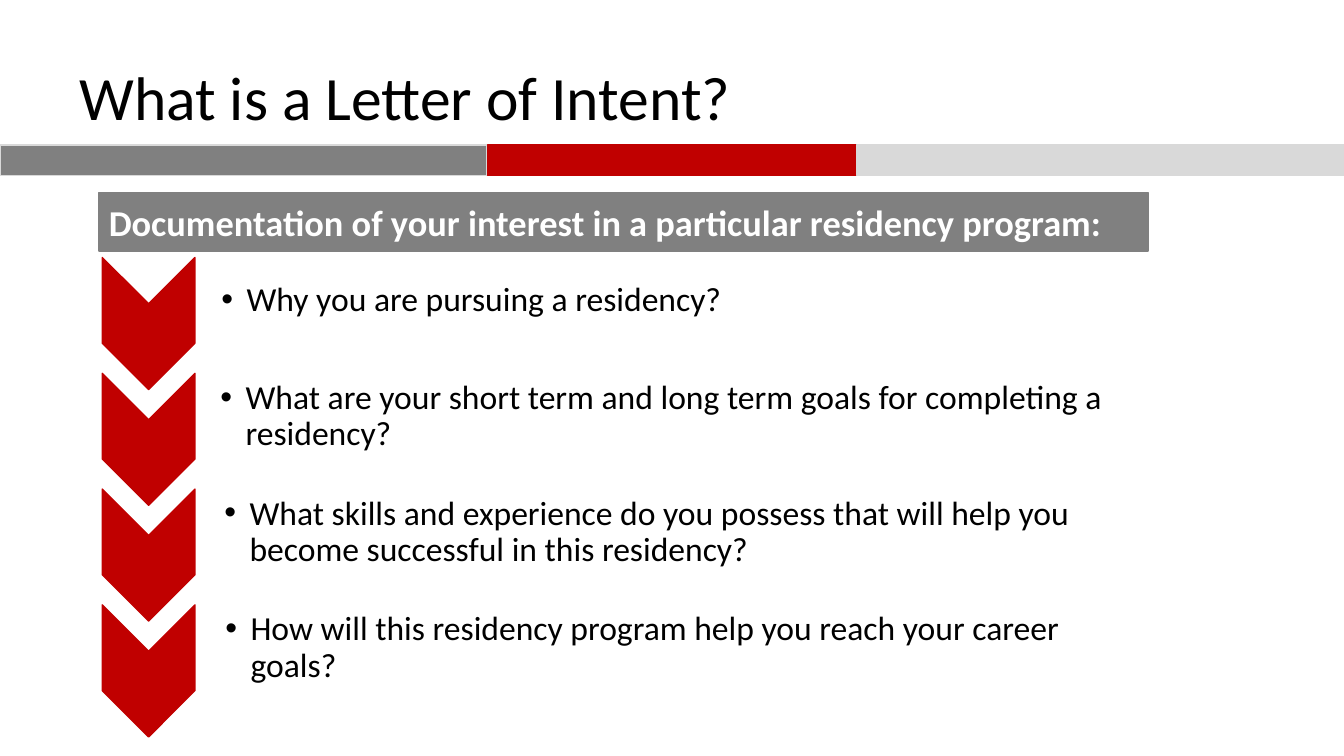
from dataclasses import dataclass

from lxml import etree
from pptx import Presentation
from pptx.dml.color import RGBColor
from pptx.enum.shapes import MSO_SHAPE
from pptx.enum.text import MSO_ANCHOR, PP_ALIGN
from pptx.oxml.ns import qn
from pptx.util import Pt

RECTANGLE = MSO_SHAPE.RECTANGLE
CHEVRON = MSO_SHAPE.CHEVRON
MIDDLE = MSO_ANCHOR.MIDDLE
LEFT = PP_ALIGN.LEFT

# Content
TITLE = "What is a Letter of Intent?"
HEADING = "Documentation of your interest in a particular residency program:"
# Each question with the left edge of its text box
QUESTIONS = [
    ("Why you are pursuing a residency?", 144.7),
    ("What are your short term and long term goals for completing a residency?", 144),
    ("What skills and experience do you possess that will help you become "
     "successful in this residency?", 146.9),
    ("How will this residency program help you reach your career goals?", 147.6),
]


@dataclass(frozen=True)
class Theme:
    font: str = "Calibri"
    black: str = "000000"
    white: str = "FFFFFF"
    gray: str = "808080"
    red: str = "C00000"
    light: str = "D9D9D9"
    title_size: int = 44
    heading_size: int = 26
    question_size: int = 24


THEME = Theme()

# Layout in points
SLIDE_WIDTH, SLIDE_HEIGHT = 960, 540
BAND_TOP, BAND_WIDTH, BAND_HEIGHT = 103.7, 348, 21.6
BANDS = [
    (0, THEME.gray, THEME.light),
    (BAND_WIDTH, THEME.red, THEME.red),
    (SLIDE_WIDTH - BAND_WIDTH, THEME.light, THEME.light),
]
ROW_STEP = 82.7
CHEVRON_BOX = (59, 198, 94.3, 66.2)
QUESTION_TOP, QUESTION_RIGHT, QUESTION_HEIGHT = 187.2, 812.6, 55.4
QUESTION_INSETS = (13.4, 1.4, 1.4, 1.4)
BULLET_INDENT = 18


def add_block(slide, kind, box, fill, line):
    shape = slide.shapes.add_shape(kind, *map(Pt, box))
    shape.shadow.inherit = False
    shape.fill.solid()
    shape.fill.fore_color.rgb = RGBColor.from_string(fill)
    shape.line.color.rgb = RGBColor.from_string(line)
    shape.line.width = Pt(1)
    return shape


def write_text(shape, text, size, color, bold=False, spacing=1.0):
    frame = shape.text_frame
    frame.word_wrap = True
    frame.vertical_anchor = MIDDLE
    frame.text = text
    paragraph = frame.paragraphs[0]
    paragraph.alignment = LEFT
    paragraph.line_spacing = spacing
    font = paragraph.runs[0].font
    font.name, font.size, font.bold = THEME.font, Pt(size), bold
    font.color.rgb = RGBColor.from_string(color)
    return paragraph


def add_bullet(paragraph):
    properties = paragraph._p.get_or_add_pPr()
    properties.set("marL", str(Pt(BULLET_INDENT)))
    properties.set("indent", str(-Pt(BULLET_INDENT)))
    etree.SubElement(properties, qn("a:buFont")).set("typeface", "Arial")
    etree.SubElement(properties, qn("a:buChar")).set("char", "•")


def add_question(slide, row, text, left):
    offset = row * ROW_STEP
    chevron_left, chevron_top, width, height = CHEVRON_BOX
    box = (chevron_left, chevron_top + offset, width, height)
    add_block(slide, CHEVRON, box, THEME.red, THEME.red).rotation = 90

    box = (left, QUESTION_TOP + offset, QUESTION_RIGHT - left, QUESTION_HEIGHT)
    question = slide.shapes.add_textbox(*map(Pt, box))
    frame = question.text_frame
    (frame.margin_left, frame.margin_top,
     frame.margin_right, frame.margin_bottom) = map(Pt, QUESTION_INSETS)
    add_bullet(write_text(question, text, THEME.question_size, THEME.black, spacing=0.9))


def main():
    presentation = Presentation()
    presentation.slide_width = Pt(SLIDE_WIDTH)
    presentation.slide_height = Pt(SLIDE_HEIGHT)
    slide = presentation.slides.add_slide(presentation.slide_layouts[6])

    # Colour bands under the title
    for left, fill, line in BANDS:
        add_block(slide, RECTANGLE, (left, BAND_TOP, BAND_WIDTH, BAND_HEIGHT), fill, line)

    # Title
    title = slide.shapes.add_textbox(Pt(49.7), Pt(19.4), Pt(809.3), Pt(104.4))
    write_text(title, TITLE, THEME.title_size, THEME.black, spacing=0.9)

    # Chevrons and questions
    for row, (text, left) in enumerate(QUESTIONS):
        add_question(slide, row, text, left)

    # Heading bar
    heading = add_block(slide, RECTANGLE, (70.6, 137.5, 749.5, 41.8), THEME.gray, THEME.gray)
    write_text(heading, HEADING, THEME.heading_size, THEME.white, bold=True)

    presentation.save("out.pptx")


if __name__ == "__main__":
    main()
